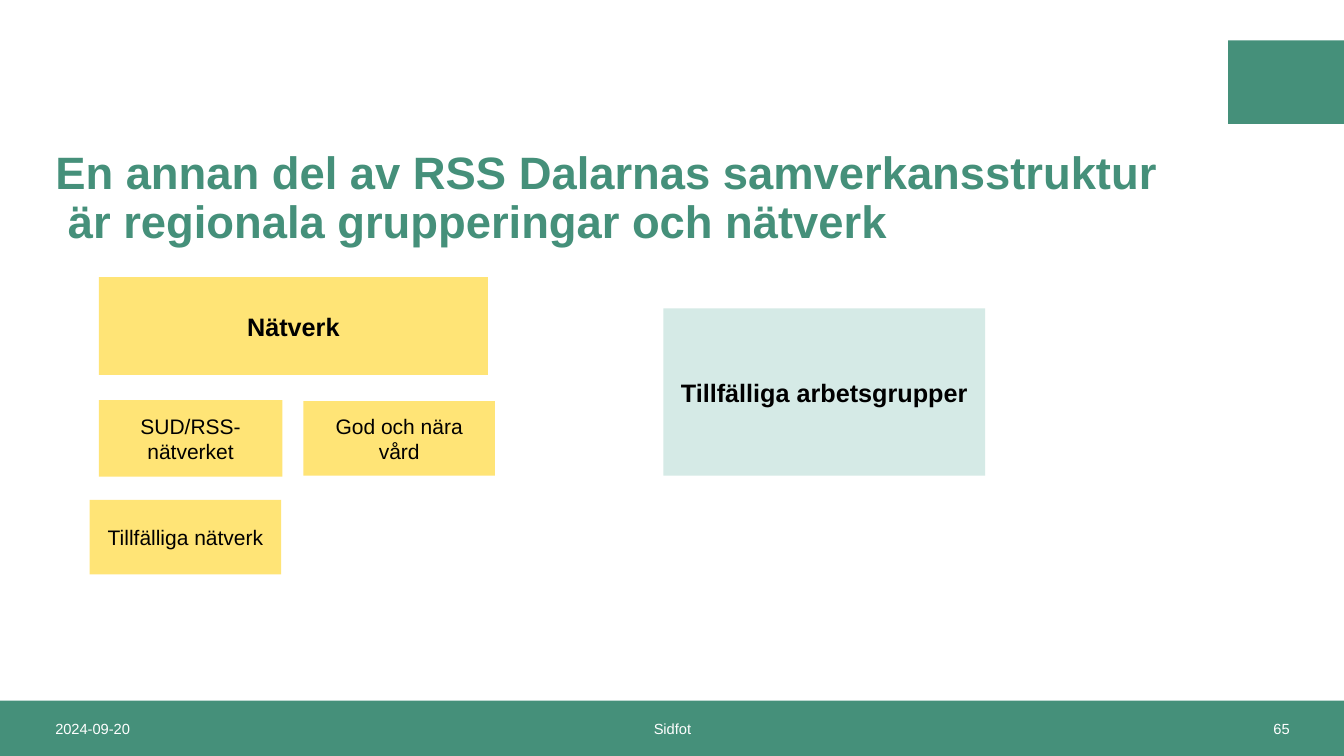
from dataclasses import dataclass

from pptx import Presentation
from pptx import util as u
from pptx.dml import color
from pptx.enum import shapes, text

PX = 9144
FONT = "Arial"
COLORS = {
    "green": "45907A",
    "yellow": "FFE476",
    "mint": "D5EAE6",
    "black": "000000",
    "white": "FFFFFF",
}
ALIGN = text.PP_ALIGN


@dataclass(frozen=True)
class Block:
    left: int
    top: int
    width: int
    height: int
    fill: str | None = None
    words: str = ""
    size: float = 15
    ink: str = "black"
    bold: bool = False
    align: text.PP_ALIGN = ALIGN.CENTER
    line_spacing: float = 1.0


def footer(left: int, width: int, words: str, align: text.PP_ALIGN) -> Block:
    return Block(left, 695, width, 55, None, words, 10.5, "white", align=align)


BLOCKS = [
    Block(1218, 40, 115, 83, "green"),
    Block(0, 695, 1333, 55, "green"),
    footer(45, 347, "2024-09-20", ALIGN.LEFT),
    footer(442, 450, "Sidfot", ALIGN.CENTER),
    footer(942, 347, "65", ALIGN.RIGHT),
    Block(45, 132, 1139, 132, None,
          "En annan del av RSS Dalarnas samverkansstruktur\v är regionala grupperingar och nätverk",
          32.4, "green", True, ALIGN.LEFT, 0.9),
    Block(98, 275, 386, 97, "yellow", "Nätverk", 18, bold=True),
    Block(98, 397, 182, 76, "yellow", "SUD/RSS-nätverket"),
    Block(301, 398, 190, 74, "yellow", "God och nära vård"),
    Block(89, 496, 190, 74, "yellow", "Tillfälliga nätverk"),
    Block(658, 306, 319, 166, "mint", "Tillfälliga arbetsgrupper", 18, bold=True),
]


def rgb(name: str) -> color.RGBColor:
    return color.RGBColor.from_string(COLORS[name])


def write(frame, block: Block) -> None:
    frame.word_wrap = True
    frame.vertical_anchor = text.MSO_ANCHOR.MIDDLE
    para = frame.paragraphs[0]
    para.text = block.words
    para.alignment = block.align
    para.line_spacing = block.line_spacing
    for span in para.runs:
        span.font.name = FONT
        span.font.size = u.Pt(block.size)
        span.font.bold = block.bold
        span.font.color.rgb = rgb(block.ink)


def draw(page, block: Block) -> None:
    place = [side * PX for side in (block.left, block.top, block.width, block.height)]
    if block.fill:
        box = page.shapes.add_shape(shapes.MSO_SHAPE.RECTANGLE, *place)
        box.shadow.inherit = False
        box.fill.solid()
        box.fill.fore_color.rgb = rgb(block.fill)
        box.line.fill.background()
    else:
        box = page.shapes.add_textbox(*place)
    if block.words:
        write(box.text_frame, block)


def main() -> None:
    deck = Presentation()
    deck.slide_width = 1333 * PX
    deck.slide_height = 750 * PX
    page = deck.slides.add_slide(deck.slide_layouts[6])
    for block in BLOCKS:
        draw(page, block)
    deck.save("out.pptx")


if __name__ == "__main__":
    main()
